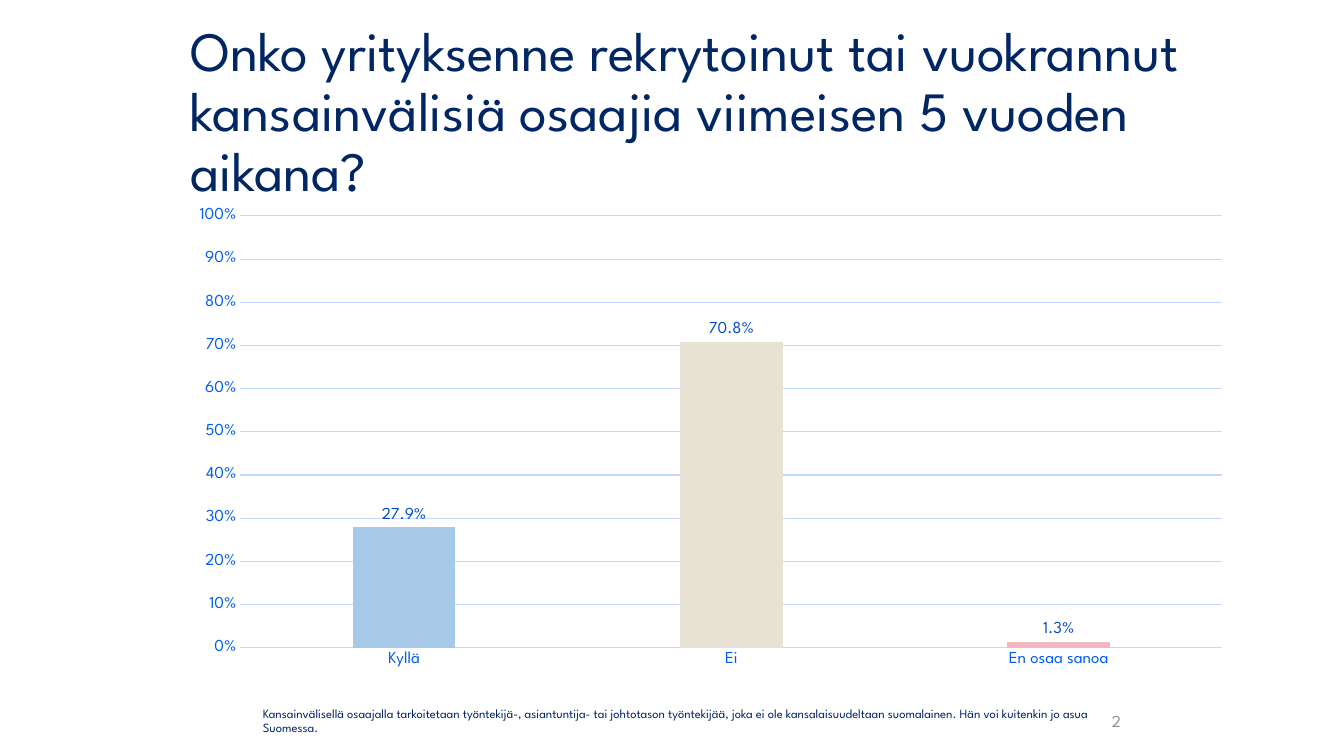
from dataclasses import dataclass
from typing import Any

from lxml.etree import SubElement
from pptx import Presentation
from pptx.chart.data import CategoryChartData
from pptx.dml.color import RGBColor
from pptx.enum.chart import XL_CHART_TYPE, XL_LABEL_POSITION, XL_TICK_MARK
from pptx.enum.text import MSO_ANCHOR, MSO_AUTO_SIZE, PP_ALIGN
from pptx.oxml.ns import qn
from pptx.util import Pt

FONT = "League Spartan"
NAVY = RGBColor(0x00, 0x26, 0x63)
GREY = RGBColor(0x8C, 0x8E, 0x9F)
AXIS_BLUE = RGBColor(0x00, 0x5D, 0xF3)
LABEL_BLUE = RGBColor(0x00, 0x4D, 0xCA)
GRID_BLUE = RGBColor(0xC1, 0xD9, 0xFF)
SKY = RGBColor(0xA5, 0xC9, 0xE7)
SAND = RGBColor(0xE8, 0xE2, 0xD5)
PINK = RGBColor(0xF2, 0xB7, 0xBF)


@dataclass(frozen=True)
class Box:
    left: float
    top: float
    width: float
    height: float

    def lengths(self) -> tuple[Pt, Pt, Pt, Pt]:
        return Pt(self.left), Pt(self.top), Pt(self.width), Pt(self.height)


@dataclass(frozen=True)
class Answer:
    name: str
    share: float
    color: RGBColor


TITLE_BOX = Box(128.9, 28.8, 787.7, 104.4)
CHART_BOX = Box(126, 144, 762.5, 342.7)
NOTE_BOX = Box(174.2, 496.1, 646.6, 38.2)
NUMBER_BOX = Box(678.2, 500.4, 129.6, 28.8)

TITLE = ("Onko yrityksenne rekrytoinut tai vuokrannut kansainvälisiä osaajia "
         "viimeisen 5 vuoden aikana?")
NOTE = ("Kansainvälisellä osaajalla tarkoitetaan työntekijä-, asiantuntija- tai "
        "johtotason työntekijää, joka ei ole kansalaisuudeltaan suomalainen. "
        "Hän voi kuitenkin jo asua Suomessa.")
ANSWERS = (
    Answer("Kyllä", 0.279, SKY),
    Answer("Ei", 0.708, SAND),
    Answer("En osaa sanoa", 0.013, PINK),
)
PLOT_LAYOUT = {"layoutTarget": "inner", "xMode": "edge", "yMode": "edge",
               "x": "0.06", "y": "0.03", "w": "0.92", "h": "0.9"}


def set_attrs(target: Any, values: dict[str, Any]) -> None:
    for name, value in values.items():
        setattr(target, name, value)


def set_font(font: Any, size: float, color: RGBColor) -> None:
    set_attrs(font, {"name": FONT, "size": Pt(size), "bold": False})
    font.color.rgb = color


def write_text(sp: Any, text: str, size: float, color: RGBColor,
               align: PP_ALIGN = PP_ALIGN.LEFT, spacing: float = 1.0) -> Any:
    tf = sp.text_frame
    set_attrs(tf, {"word_wrap": True, "auto_size": MSO_AUTO_SIZE.NONE,
                   "vertical_anchor": MSO_ANCHOR.MIDDLE})
    p = tf.paragraphs[0]
    set_attrs(p, {"alignment": align, "line_spacing": spacing})
    r = p.add_run()
    r.text = text
    set_font(r.font, size, color)
    return p


def set_plot_layout(chart: Any) -> None:
    """Fix the inner plot area as fractions of the chart."""
    plot_area = chart.element.find(f".//{qn('c:plotArea')}")
    layout = plot_area.find(qn("c:layout"))
    if layout is None:
        layout = SubElement(plot_area, qn("c:layout"))
        plot_area.insert(0, layout)
    manual = SubElement(layout, qn("c:manualLayout"))
    for name, value in PLOT_LAYOUT.items():
        SubElement(manual, qn(f"c:{name}")).set("val", value)


def add_answer_chart(slide: Any) -> None:
    data = CategoryChartData(number_format="0.0%")
    data.categories = [answer.name for answer in ANSWERS]
    data.add_series("Series 1", [answer.share for answer in ANSWERS])
    chart = slide.shapes.add_chart(
        XL_CHART_TYPE.COLUMN_CLUSTERED, *CHART_BOX.lengths(), data).chart
    set_attrs(chart, {"has_title": False, "has_legend": False})
    set_font(chart.font, 10, NAVY)
    set_plot_layout(chart)

    for axis in (chart.category_axis, chart.value_axis):
        set_attrs(axis, {"major_tick_mark": XL_TICK_MARK.NONE,
                         "minor_tick_mark": XL_TICK_MARK.NONE})
        set_font(axis.tick_labels.font, 12, AXIS_BLUE)
    values = chart.value_axis
    set_attrs(values, {"minimum_scale": 0, "maximum_scale": 1,
                       "major_unit": 0.1, "has_major_gridlines": True})
    set_attrs(values.tick_labels, {"number_format": "0%",
                                   "number_format_is_linked": False})
    values.format.line.fill.background()
    for line in (chart.category_axis.format.line,
                 values.major_gridlines.format.line):
        line.color.rgb = GRID_BLUE
        line.width = Pt(0.75)

    plot = chart.plots[0]
    set_attrs(plot, {"gap_width": 219, "overlap": -27,
                     "vary_by_categories": False})
    series = plot.series[0]
    labels = series.data_labels
    set_attrs(labels, {"show_value": True, "number_format": "0.0%",
                       "number_format_is_linked": False,
                       "position": XL_LABEL_POSITION.OUTSIDE_END})
    set_font(labels.font, 12, LABEL_BLUE)
    for i, answer in enumerate(ANSWERS):
        fill = series.points[i].format.fill
        fill.solid()
        fill.fore_color.rgb = answer.color


def main() -> None:
    prs = Presentation()
    set_attrs(prs, {"slide_width": Pt(960), "slide_height": Pt(540)})
    slide = prs.slides.add_slide(prs.slide_layouts[5])

    title = slide.shapes.title
    set_attrs(title, dict(zip(("left", "top", "width", "height"),
                              TITLE_BOX.lengths())))
    write_text(title, TITLE, 39.6, NAVY, spacing=0.9)

    number = slide.shapes.add_textbox(*NUMBER_BOX.lengths())
    write_text(number, "2", 12, GREY, PP_ALIGN.RIGHT)

    add_answer_chart(slide)

    note = slide.shapes.add_textbox(*NOTE_BOX.lengths())
    p = write_text(note, NOTE, 9, NAVY, spacing=0.9)
    p._p.get_or_add_pPr().set("marL", str(int(Pt(6.5))))

    prs.save("out.pptx")


if __name__ == "__main__":
    main()
